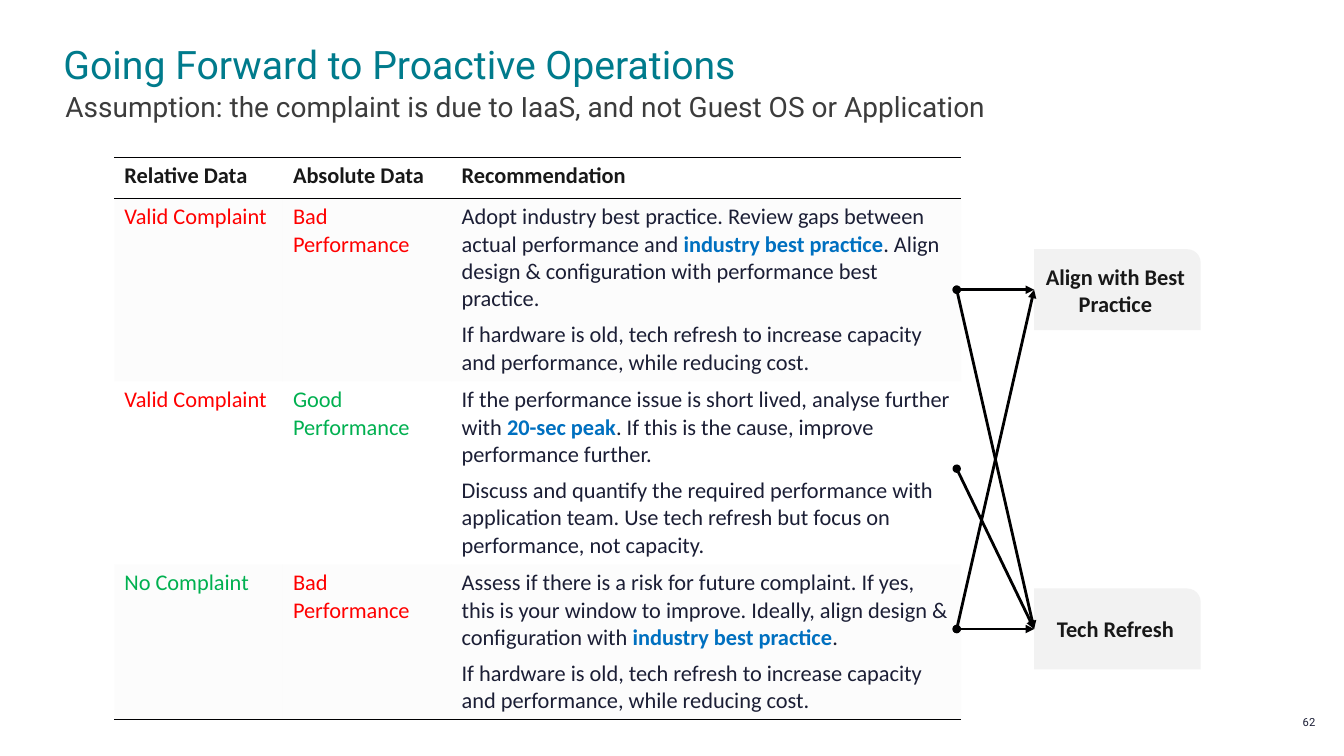
from lxml.etree import SubElement
from pptx import Presentation
from pptx.dml.color import RGBColor
from pptx.enum.shapes import MSO_CONNECTOR, MSO_SHAPE
from pptx.enum.text import MSO_ANCHOR, MSO_AUTO_SIZE, PP_ALIGN
from pptx.oxml import parse_xml
from pptx.oxml.ns import nsdecls, qn
from pptx.util import Cm, Pt

BLACK, DARK, NAVY, PALE = "000001", "181818", "1B1E35", "F2F2F2"
RED, GREEN, BLUE = "FF0000", "00B050", "0070C0"
NO_GRID_STYLE = "{2D5ABB26-0587-4C30-8999-92F81FD0307C}"

HEADINGS = ["Relative Data", "Absolute Data", "Recommendation"]
COLUMN_WIDTHS = [4.25, 4.25, 12.84]
ROW_HEIGHTS = [1.04, 4.61, 4.61, 3.91]

VALID, NO_COMPLAINT = ("Valid Complaint", RED), ("No Complaint", GREEN)
BAD, GOOD = ("Bad Performance", RED), ("Good Performance", GREEN)
REFRESH = ["If hardware is old, tech refresh to increase capacity and performance, "
           "while reducing cost."]

# Each recommendation is a list of paragraphs; every second run is a key term
CASES = [
    (VALID, BAD, [
        ["Adopt industry best practice. Review gaps between actual performance and ",
         "industry best practice",
         ". Align design & configuration with performance best practice."],
        REFRESH]),
    (VALID, GOOD, [
        ["If the performance issue is short lived, analyse further with ",
         "20-sec peak",
         ". If this is the cause, improve performance further."],
        ["Discuss and quantify the required performance with application team. "
         "Use tech refresh but focus on performance, not capacity."]]),
    (NO_COMPLAINT, BAD, [
        ["Assess if there is a risk for future complaint. If yes, this is your window "
         "to improve. Ideally, align design & configuration with ",
         "industry best practice", "."],
        REFRESH]),
]


def rgb(hex_colour):
    return RGBColor.from_string(hex_colour)


def set_attributes(target, values):
    for name, value in values.items():
        setattr(target, name, value)


def add_run(paragraph, text, colour, size=16, face="Calibri", bold=False):
    run = paragraph.add_run()
    run.text = text
    set_attributes(run.font, {"name": face, "size": Pt(size), "bold": bold})
    run.font.color.rgb = rgb(colour)


def fill_line(shape, place, text, colour, size, anchor, align=PP_ALIGN.LEFT, spacing=1.0):
    """Place a single line of Roboto text in a frame without insets."""
    set_attributes(shape, dict(zip(("left", "top", "width", "height"), map(Cm, place))))
    frame = shape.text_frame
    set_attributes(frame, {"margin_left": 0, "margin_right": 0, "margin_top": 0,
                           "margin_bottom": 0, "word_wrap": True,
                           "auto_size": MSO_AUTO_SIZE.NONE, "vertical_anchor": anchor})
    paragraph = frame.paragraphs[0]
    set_attributes(paragraph, {"alignment": align, "line_spacing": spacing})
    add_run(paragraph, text, colour, size, "Roboto")


def add_line_box(slide, place, *text_format):
    box = slide.shapes.add_textbox(*map(Cm, place))
    fill_line(box, place, *text_format)


def set_border(cell, side):
    border = parse_xml(
        f'<a:{side} {nsdecls("a")} w="{Pt(1)}"><a:solidFill><a:srgbClr val="{BLACK}"/>'
        f'</a:solidFill></a:{side}>')
    properties = cell._tc.get_or_add_tcPr()
    properties.insert(len(properties.findall(qn("a:lnT"))), border)


def shade(cell, shaded):
    if not shaded:
        cell.fill.background()
        return
    cell.fill.solid()
    cell.fill.fore_color.rgb = rgb(PALE)
    tint = cell._tc.tcPr.find(".//" + qn("a:srgbClr"))
    SubElement(tint, qn("a:alpha")).set("val", "20000")


def write_recommendation(cell, paragraphs):
    frame = cell.text_frame
    for number, runs in enumerate(paragraphs):
        paragraph = frame.add_paragraph() if number else frame.paragraphs[0]
        paragraph.space_after = Pt(6)
        for position, text in enumerate(runs):
            key_term = position % 2 == 1
            add_run(paragraph, text, BLUE if key_term else NAVY, bold=key_term)


def add_case_table(slide):
    table = slide.shapes.add_table(
        len(ROW_HEIGHTS), len(COLUMN_WIDTHS), Cm(2.88), Cm(3.96),
        Cm(sum(COLUMN_WIDTHS)), Cm(sum(ROW_HEIGHTS))).table
    table.horz_banding = False
    table._tbl.tblPr.find(qn("a:tableStyleId")).text = NO_GRID_STYLE
    for column, width in zip(table.columns, COLUMN_WIDTHS):
        column.width = Cm(width)
    for row, height in zip(table.rows, ROW_HEIGHTS):
        row.height = Cm(height)

    # Headings
    for column, heading in enumerate(HEADINGS):
        add_run(table.cell(0, column).text_frame.paragraphs[0], heading, DARK, bold=True)

    # Cases
    for row, (relative, absolute, recommendation) in enumerate(CASES, 1):
        for column, (verdict, colour) in enumerate((relative, absolute)):
            add_run(table.cell(row, column).text_frame.paragraphs[0], verdict, colour)
        write_recommendation(table.cell(row, 2), recommendation)

    # Shading and rules
    last = len(CASES)
    for row in range(last + 1):
        for column in range(len(HEADINGS)):
            cell = table.cell(row, column)
            shade(cell, row % 2 == 1)
            if row == 0:
                set_border(cell, "lnT")
            if row in (0, last):
                set_border(cell, "lnB")


def add_action(slide, top, label):
    action = slide.shapes.add_shape(
        MSO_SHAPE.ROUND_1_RECTANGLE, Cm(26.06), Cm(top), Cm(4.2), Cm(2.04))
    action.shadow.inherit = False
    action.fill.solid()
    action.fill.fore_color.rgb = rgb(PALE)
    action.line.fill.background()
    set_attributes(action.text_frame, {"word_wrap": True, "vertical_anchor": MSO_ANCHOR.MIDDLE})
    paragraph = action.text_frame.paragraphs[0]
    set_attributes(paragraph, {"alignment": PP_ALIGN.CENTER, "space_after": Pt(6)})
    add_run(paragraph, label, DARK, bold=True)
    return action


def add_arrow(slide, case_middle, action):
    arrow = slide.shapes.add_connector(
        MSO_CONNECTOR.STRAIGHT, Cm(24.11), Cm(case_middle), action.left, action.top)
    arrow.end_connect(action, 1)
    arrow.line.width = Pt(2)
    arrow.line.color.rgb = rgb(BLACK)
    outline = arrow.line._get_or_add_ln()
    SubElement(outline, qn("a:headEnd")).set("type", "oval")
    SubElement(outline, qn("a:tailEnd")).set("type", "triangle")
    SubElement(arrow._element.spPr, qn("a:effectLst"))


def main():
    deck = Presentation()
    set_attributes(deck, {"slide_width": Cm(33.87), "slide_height": Cm(19.05)})
    slide = deck.slides.add_slide(deck.slide_layouts.get_by_name("Title Only"))

    # Title, subtitle and page number
    fill_line(slide.shapes.title, (1.6, 1.14, 30.56, 1.07),
              "Going Forward to Proactive Operations", "007B8C", 28,
              MSO_ANCHOR.BOTTOM, PP_ALIGN.LEFT, 0.9)
    add_line_box(slide, (1.65, 2.26, 30.45, 0.69),
                 "Assumption: the complaint is due to IaaS, and not Guest OS or Application",
                 "3C3C3C", 20, MSO_ANCHOR.TOP)
    add_line_box(slide, (31.93, 17.96, 1.22, 0.51), "62", NAVY, 8,
                 MSO_ANCHOR.MIDDLE, PP_ALIGN.RIGHT, 0.9)

    # Cases with their recommendations
    add_case_table(slide)

    # Actions and the cases that lead to them
    align = add_action(slide, 6.28, "Align with Best Practice")
    refresh = add_action(slide, 14.83, "Tech Refresh")
    valid_bad, valid_good, silent_bad = 7.3, 11.81, 15.85
    for case_middle, action in [(valid_bad, align), (silent_bad, refresh), (silent_bad, align),
                                (valid_good, refresh), (valid_bad, refresh)]:
        add_arrow(slide, case_middle, action)

    deck.save("out.pptx")


if __name__ == "__main__":
    main()
